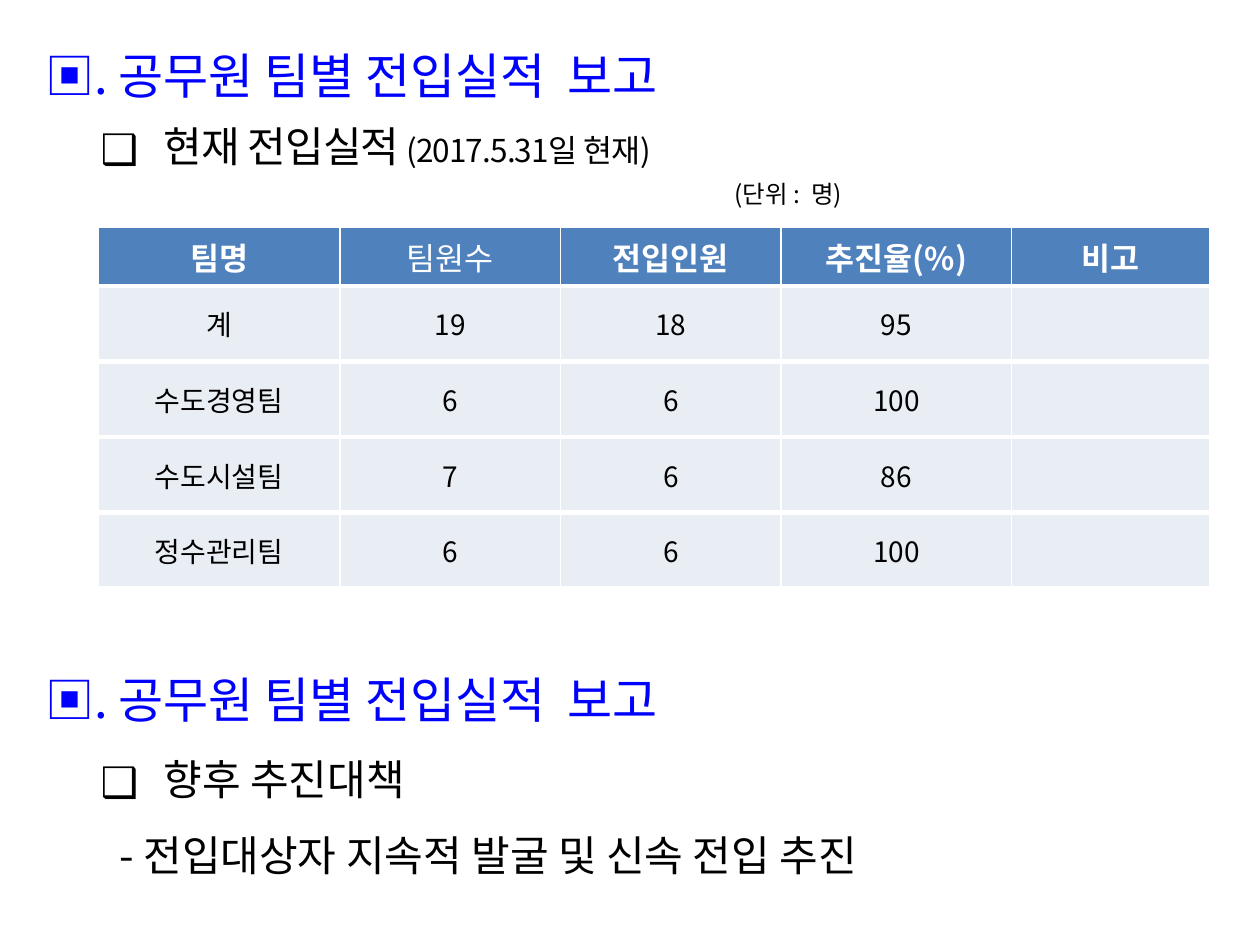
from dataclasses import dataclass

from lxml.etree import SubElement
from pptx import Presentation
from pptx.dml.color import RGBColor
from pptx.enum.text import MSO_ANCHOR as Anchor, PP_ALIGN as Align
from pptx.oxml import parse_xml
from pptx.oxml.ns import nsdecls, qn
from pptx.util import Inches, Pt


@dataclass(frozen=True)
class Theme:
    font: str = "Noto Sans CJK KR"
    heading: str = "0000FF"
    text: str = "000000"
    header_fill: str = "4F81BD"
    row_fill: str = "E9EDF4"
    white: str = "FFFFFF"
    heading_size: int = 28
    body_size: int = 24
    table_head_size: int = 18
    table_size: int = 16
    note_size: int = 18
    unit_size: int = 14


THEME = Theme()
WIDTH, HEIGHT = 10, 7.5
LEFT = 0.02  # share of the slide width
HEADING = "▣. 공무원 팀별 전입실적  보고"


@dataclass(frozen=True)
class Line:
    text: str
    leading: float  # points
    size: int = THEME.body_size
    color: str = THEME.text
    margin: float = 1  # inches
    hanging: float = 0
    bullet: str = ""
    note: str = ""
    tracking: float = 0  # points


def heading_line(leading: float) -> Line:
    return Line(HEADING, leading, THEME.heading_size, THEME.heading,
                margin=0.56, hanging=0.5)


def set_font(para, size: int, color: str, bold: bool = False) -> None:
    font = para.font
    font.name, font.size, font.bold = THEME.font, Pt(size), bold
    font.color.rgb = RGBColor.from_string(color)
    defaults = para._p.pPr.find(qn("a:defRPr"))
    SubElement(defaults, qn("a:ea")).set("typeface", THEME.font)


def write_line(para, line: Line) -> None:
    para.alignment = Align.LEFT
    para.line_spacing = Pt(line.leading)
    para.space_before = para.space_after = Pt(0)
    set_font(para, line.size, line.color)
    props = para._p.pPr
    props.set("marL", str(Inches(line.margin)))
    props.set("indent", str(-Inches(line.hanging)))
    defaults = props.find(qn("a:defRPr"))
    if line.tracking:
        defaults.set("spc", str(int(line.tracking * 100)))
    if line.bullet:
        for tag in (f'<a:buClr {nsdecls("a")}><a:srgbClr val="{line.color}"/></a:buClr>',
                    f'<a:buFont {nsdecls("a")} typeface="{THEME.font}"/>',
                    f'<a:buChar {nsdecls("a")} char="{line.bullet}"/>'):
            defaults.addprevious(parse_xml(tag))
    para.add_run().text = line.text
    if line.note:
        span = para.add_run()
        span.text = line.note
        span.font.size = Pt(THEME.note_size)


def fill_box(box, top: float, height: float, lines: list[Line]) -> None:
    """Place a text shape by shares of the slide height and write its lines."""
    box.left, box.width = Inches(LEFT * WIDTH), Inches((1 - 2 * LEFT) * WIDTH)
    box.top, box.height = Inches(top * HEIGHT), Inches(height * HEIGHT)
    frame = box.text_frame
    frame.word_wrap = True
    frame.vertical_anchor = Anchor.TOP
    for number, line in enumerate(lines):
        para = frame.add_paragraph() if number else frame.paragraphs[0]
        write_line(para, line)


def add_lines(page, top: float, height: float, lines: list[Line]) -> None:
    fill_box(page.shapes.add_textbox(0, 0, 0, 0), top, height, lines)


def set_borders(cell, top: float, bottom: float) -> None:
    props = cell._tc.get_or_add_tcPr()
    widths = {"lnL": 1, "lnR": 1, "lnT": top, "lnB": bottom}
    for place, (side, width) in enumerate(widths.items()):
        props.insert(place, parse_xml(
            f'<a:{side} {nsdecls("a")} w="{Pt(width)}"><a:solidFill>'
            f'<a:srgbClr val="{THEME.white}"/></a:solidFill></a:{side}>'))


def add_results(page, rows: list[tuple], widths: list[float]) -> None:
    heights = [0.47] + [0.6] * (len(rows) - 1)
    table = page.shapes.add_table(
        len(rows), len(widths), Inches(0.78), Inches(1.8),
        Inches(sum(widths)), Inches(sum(heights))).table
    for column, width in zip(table.columns, widths):
        column.width = Inches(width)
    for r, (values, height) in enumerate(zip(rows, heights)):
        table.rows[r].height = Inches(height)
        head = r == 0
        for c, value in enumerate(values):
            cell = table.cell(r, c)
            cell.fill.solid()
            cell.fill.fore_color.rgb = RGBColor.from_string(
                THEME.header_fill if head else THEME.row_fill)
            set_borders(cell, top=1 if head else 3, bottom=3)
            cell.vertical_anchor = Anchor.MIDDLE
            para = cell.text_frame.paragraphs[0]
            para.alignment = Align.CENTER
            if head:
                set_font(para, THEME.table_head_size, THEME.white, bold=c != 1)
            else:
                set_font(para, THEME.table_size, THEME.text)
            if value:
                para.add_run().text = value


def main() -> None:
    deck = Presentation()
    deck.slide_width, deck.slide_height = Inches(WIDTH), Inches(HEIGHT)
    page = deck.slides.add_slide(deck.slide_layouts[5])

    # Current results
    fill_box(page.shapes.title, 0.02, 0.1, [heading_line(45.5)])
    add_lines(page, 0.106, 0.13, [
        Line("현재 전입실적", 37, hanging=0.5, bullet="❑",
             note=" (2017.5.31일 현재)", tracking=-0.5),
        Line("(단위 :  명)", 21.5, THEME.unit_size, margin=5.53),
    ])
    add_results(page, [
        ("팀명", "팀원수", "전입인원", "추진율(%)", "비고"),
        ("계", "19", "18", "95", ""),
        ("수도경영팀", "6", "6", "100", ""),
        ("수도시설팀", "7", "6", "86", ""),
        ("정수관리팀", "6", "6", "100", ""),
    ], [1.92, 1.75, 1.75, 1.83, 1.57])

    # Coming measures
    add_lines(page, 0.667, 0.275, [
        heading_line(52.5),
        Line("향후 추진대책", 43.4, hanging=0.5, bullet="❑"),
        Line("- 전입대상자 지속적 발굴 및 신속 전입 추진", 43.4, margin=0.65),
    ])
    deck.save("out.pptx")


if __name__ == "__main__":
    main()
